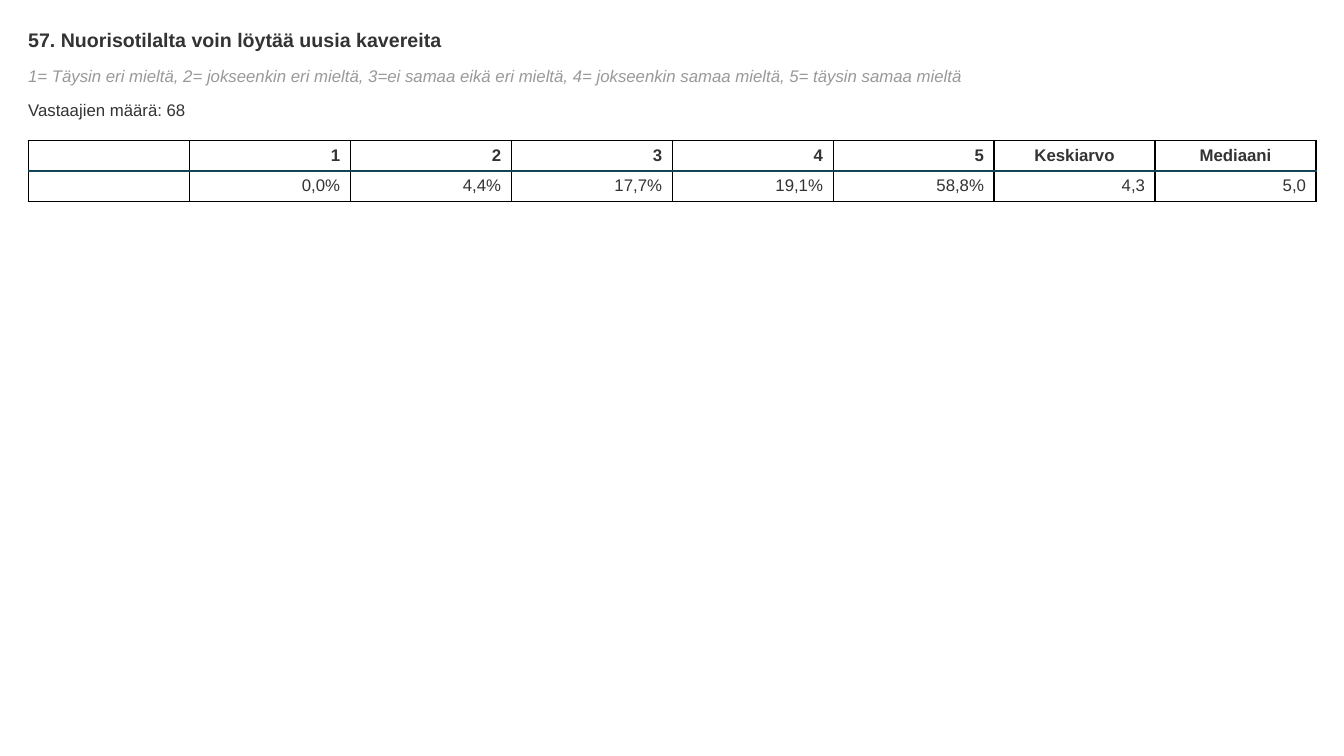
from dataclasses import dataclass

from lxml.etree import SubElement
from pptx import Presentation
from pptx.dml.color import RGBColor
from pptx.enum.text import MSO_ANCHOR, MSO_AUTO_SIZE, PP_ALIGN as Align
from pptx.oxml.ns import qn
from pptx.slide import Slide
from pptx.table import _Cell as Cell
from pptx.text.text import Font
from pptx.util import Cm, Pt

COLORS = {"text": "333333", "hint": "999999", "grid": "000000", "rule": "124456"}
FONT = "Arial"
LEFT, WIDTH = 0.71, 32.46
TABLE_TOP, ROW_HEIGHT = 3.55, 0.76
BODY_SIZE = 12


@dataclass
class Line:
    text: str
    top: float
    height: float
    size: int = BODY_SIZE
    color: str = "text"
    bold: bool = False
    italic: bool = False


@dataclass
class Column:
    header: str = ""
    value: str = ""
    header_align: Align = Align.RIGHT


LINES = [
    Line("57. Nuorisotilalta voin löytää uusia kavereita", 0.71, 0.58, size=14, bold=True),
    Line("1= Täysin eri mieltä, 2= jokseenkin eri mieltä, 3=ei samaa eikä eri mieltä, "
         "4= jokseenkin samaa mieltä, 5= täysin samaa mieltä", 1.65, 0.51,
         color="hint", italic=True),
    Line("Vastaajien määrä: 68", 2.51, 0.51),
]
COLUMNS = [
    Column(),
    Column("1", "0,0%"),
    Column("2", "4,4%"),
    Column("3", "17,7%"),
    Column("4", "19,1%"),
    Column("5", "58,8%"),
    Column("Keskiarvo", "4,3", Align.CENTER),
    Column("Mediaani", "5,0", Align.CENTER),
]


def style_font(font: Font, size: int, color: str, bold: bool, italic: bool = False) -> None:
    font.name, font.size = FONT, Pt(size)
    font.bold, font.italic = bold, italic
    font.color.rgb = RGBColor.from_string(COLORS[color])


def add_line(s: Slide, line: Line) -> None:
    box = s.shapes.add_textbox(Cm(LEFT), Cm(line.top), Cm(WIDTH), Cm(line.height))
    tf = box.text_frame
    tf.margin_left = tf.margin_right = tf.margin_top = tf.margin_bottom = 0
    tf.word_wrap = True
    tf.auto_size = MSO_AUTO_SIZE.SHAPE_TO_FIT_TEXT
    tf.text = line.text
    style_font(tf.paragraphs[0].runs[0].font, line.size, line.color, line.bold, line.italic)


def add_border(cell: Cell, side: str, width: float, color: str) -> None:
    ln = SubElement(cell._tc.get_or_add_tcPr(), qn(f"a:ln{side}"), w=str(Pt(width)))
    fill = SubElement(ln, qn("a:solidFill"))
    SubElement(fill, qn("a:srgbClr"), val=COLORS[color])


def fill_cell(cell: Cell, text: str, align: Align, is_header: bool) -> None:
    cell.text = text
    cell.vertical_anchor = MSO_ANCHOR.TOP
    p = cell.text_frame.paragraphs[0]
    p.alignment = align
    for r in p.runs:
        style_font(r.font, BODY_SIZE, "text", is_header)
    if not text:  # keeps an empty cell as low as its row
        SubElement(p._p, qn("a:endParaRPr"), sz=str(BODY_SIZE * 100))

    # Thin grid, with a heavier rule between header and values
    rule_side = "B" if is_header else "T"
    for side in "LRTB":
        width, color = (2, "rule") if side == rule_side else (1, "grid")
        add_border(cell, side, width, color)
    cell.fill.background()


def add_results(s: Slide, columns: list[Column]) -> None:
    frame = s.shapes.add_table(2, len(columns), Cm(LEFT), Cm(TABLE_TOP),
                               Cm(WIDTH), Cm(2 * ROW_HEIGHT))
    table = frame.table
    table.horz_banding = False
    for row in table.rows:
        row.height = Cm(ROW_HEIGHT)
    for i, column in enumerate(columns):
        table.columns[i].width = Cm(WIDTH / len(columns))
        fill_cell(table.cell(0, i), column.header, column.header_align, True)
        fill_cell(table.cell(1, i), column.value, Align.RIGHT, False)


def main() -> None:
    prs = Presentation()
    prs.slide_width, prs.slide_height = Cm(33.87), Cm(19.05)
    s = prs.slides.add_slide(prs.slide_layouts[6])

    # Question, scale and number of respondents
    for line in LINES:
        add_line(s, line)

    # Answer distribution
    add_results(s, COLUMNS)
    prs.save("out.pptx")


if __name__ == "__main__":
    main()
